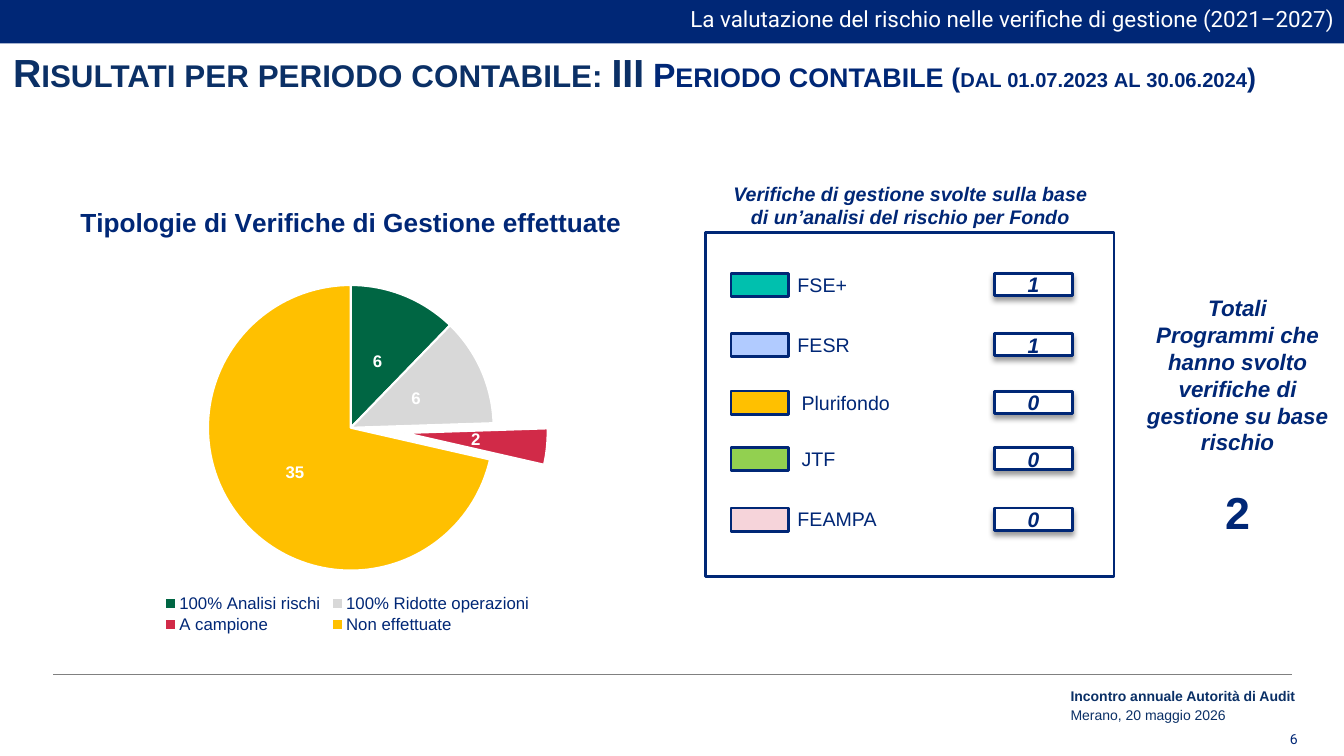
from lxml import etree
from pptx import Presentation
from pptx.chart.data import CategoryChartData
from pptx.dml.color import RGBColor
from pptx.enum.chart import XL_CHART_TYPE as ChartType, XL_LABEL_POSITION as LabelPosition
from pptx.enum.chart import XL_LEGEND_POSITION as LegendPosition
from pptx.enum.shapes import MSO_CONNECTOR as Connector, MSO_SHAPE as Shape
from pptx.enum.text import MSO_ANCHOR as Anchor, MSO_AUTO_SIZE as AutoSize, PP_ALIGN as Align
from pptx.oxml import parse_xml
from pptx.oxml.ns import nsdecls, qn
from pptx.util import Inches, Pt

NAVY, DARK, WHITE = "002776", "0B3066", "FFFFFF"
SHADOW = (
    f'<a:effectLst {nsdecls("a")}><a:outerShdw blurRad="50800" dist="38100" dir="5400000" '
    'algn="t" rotWithShape="0"><a:srgbClr val="000000"><a:alpha val="40000"/></a:srgbClr>'
    '</a:outerShdw></a:effectLst>'
)


def colour(value):
    """Turn a hex string into a colour."""
    return RGBColor.from_string(value)


def style(font, size=14, ink=NAVY, bold=False, italic=False, face="Arial"):
    """Format a font."""
    font.name, font.size, font.bold, font.italic = face, Pt(size), bold, italic
    font.color.rgb = colour(ink)


def write(box, text, new_para=False, align=Align.LEFT, anchor=Anchor.TOP, inset=None,
          wrap=True, before=0, small_caps=False, **format):
    """Add a formatted span to a shape, optionally in a new paragraph."""
    frame = box.text_frame
    frame.word_wrap, frame.vertical_anchor, frame.auto_size = wrap, anchor, AutoSize.NONE
    if inset is not None:
        frame.margin_left = frame.margin_right = Inches(inset)
        frame.margin_top = frame.margin_bottom = Inches(inset)
    para = frame.add_paragraph() if new_para else frame.paragraphs[-1]
    para.alignment = align
    if before:
        para.space_before = Pt(before)
    span = para.add_run()
    span.text = text
    style(span.font, **format)
    if small_caps:
        span._r.get_or_add_rPr().set("cap", "small")


def text_box(shapes, left, top, width, height, text, **format):
    """Add a text box."""
    box = shapes.add_textbox(Inches(left), Inches(top), Inches(width), Inches(height))
    write(box, text, **format)
    return box


def rectangle(shapes, left, top, width, height, fill=None, line=None, shadow=False):
    """Add a rectangle with optional fill, outline and shadow."""
    box = shapes.add_shape(Shape.RECTANGLE, Inches(left), Inches(top), Inches(width), Inches(height))
    box.shadow.inherit = False
    if fill:
        box.fill.solid()
        box.fill.fore_color.rgb = colour(fill)
    else:
        box.fill.background()
    if line:
        box.line.color.rgb = colour(line)
        box.line.width = Pt(2)
    else:
        box.line.fill.background()
    if shadow:
        properties = box._element.spPr
        properties.replace(properties.find(qn("a:effectLst")), parse_xml(SHADOW))
    return box


def header(page, left, top, width):
    """Draw the top band and the slide title."""
    band = rectangle(page.shapes, left, top, width, 0.43, fill=NAVY)
    write(band, "La valutazione del rischio nelle verifiche di gestione (2021–2027)",
          align=Align.RIGHT, size=16, ink=WHITE, face="Roboto")
    title = page.shapes.title
    title.left, title.top = Inches(left + 0.03), Inches(top + 0.43)
    title.width, title.height = Inches(width), Inches(0.98)
    for text, size, ink in (
        ("Risultati per periodo contabile: III ", 28, DARK),
        ("Periodo contabile (", 24, NAVY),
        ("dal 01.07.2023 al 30.06.2024", 18, NAVY),
        (")", 24, NAVY),
    ):
        write(title, text, size=size, ink=ink, bold=True, small_caps=True)


def place(element, x, y, width=None, height=None, inner=False):
    """Set the manual layout of a chart part, in fractions of the chart."""
    for old in element.findall(qn("c:layout")):
        element.remove(old)
    layout = parse_xml(f'<c:layout {nsdecls("c")}><c:manualLayout/></c:layout>')
    settings = [("layoutTarget", "inner")] if inner else []
    settings += [("xMode", "edge"), ("yMode", "edge"), ("x", x), ("y", y)]
    if width:
        settings += [("w", width), ("h", height)]
    for name, value in settings:
        etree.SubElement(layout[0], qn(f"c:{name}")).set("val", str(value))
    leading = element.findall(qn("c:tx")) + element.findall(qn("c:legendPos"))
    element.insert(len(leading), layout)


def checks_pie(page, left, top, width, height):
    """Draw the pie of checks by type."""
    data = CategoryChartData()
    data.categories = ["100% Analisi rischi", "100% Ridotte operazioni", "A campione", "Non effettuate"]
    data.add_series("Verifiche", (6, 6, 2, 35))
    chart = page.shapes.add_chart(ChartType.PIE, Inches(left), Inches(top),
                                  Inches(width), Inches(height), data).chart
    style(chart.font, size=10)
    chart.has_title = True
    span = chart.chart_title.text_frame.paragraphs[0].add_run()
    span.text = "Tipologie di Verifiche di Gestione effettuate"
    style(span.font, size=18.7, bold=True)
    chart.has_legend = True
    chart.legend.position = LegendPosition.BOTTOM
    chart.legend.include_in_layout = False
    style(chart.legend.font, size=12)

    pie = chart.plots[0]
    pie.vary_by_categories = True
    pie.has_data_labels = True
    pie.data_labels.show_value = True
    pie.data_labels.show_percentage = False
    pie.data_labels.position = LabelPosition.CENTER
    style(pie.data_labels.font, size=12, ink=WHITE, bold=True)
    series = pie.series[0]
    for index, fill in enumerate(("006643", "D8D8D8", "D12A48", "FFC000")):
        slice_format = series.points[index].format
        slice_format.fill.solid()
        slice_format.fill.fore_color.rgb = colour(fill)
        slice_format.line.color.rgb = colour(WHITE)
        slice_format.line.width = Pt(1.5)
    sample = series._element.findall(qn("c:dPt"))[2]
    explosion = parse_xml(f'<c:explosion {nsdecls("c")} val="38"/>')
    sample.find(qn("c:spPr")).addprevious(explosion)

    root = chart._chartSpace.chart
    place(root.find(qn("c:title")), 0.11, 0.05)
    place(root.find(qn("c:plotArea")), 0.3, 0.21, 0.41, 0.67, inner=True)
    place(root.find(qn("c:legend")), 0.23, 0.9, 0.54, 0.1)


def fund_row(page, left, top, name, fill, count, indent):
    """Draw one fund as a group of swatch, name and count."""
    shapes = page.shapes.add_group_shape().shapes
    rectangle(shapes, left, top, 0.57, 0.23, fill=fill, line=NAVY)
    text_box(shapes, left + indent, top - 0.06, 1.2, 0.34, name,
             anchor=Anchor.MIDDLE, inset=0.06)
    box = rectangle(shapes, left + 2.61, top, 0.78, 0.22, fill=WHITE, line=NAVY, shadow=True)
    write(box, count, align=Align.CENTER, anchor=Anchor.MIDDLE, inset=0.06,
          size=15, bold=True, italic=True)


def funds_panel(page, left, top, width, height):
    """Draw the framed list of funds and its heading."""
    rectangle(page.shapes, left, top, width, height, line=NAVY)
    text_box(page.shapes, left + 0.12, top - 0.47, 3.82, 0.39,
             "Verifiche di gestione svolte sulla base di un’analisi del rischio per Fondo",
             align=Align.CENTER, anchor=Anchor.MIDDLE, inset=0.06, bold=True, italic=True)
    for offset, name, fill, count, indent in (
        (0.4, "FSE+", "00C0AE", "1", 0.6),
        (1, "FESR", "B1CBFF", "1", 0.6),
        (1.57, "Plurifondo", "FFC000", "0", 0.64),
        (2.13, "JTF", "92D050", "0", 0.64),
        (2.73, "FEAMPA", "F6D4DA", "0", 0.6),
    ):
        fund_row(page, left + 0.25, top + offset, name, fill, count, indent)


def total(page, left, top, width):
    """Write the total of programmes beside the panel."""
    text_box(page.shapes, left, top, width, 1.7,
             "Totali Programmi che hanno svolto verifiche di gestione su base rischio",
             align=Align.CENTER, inset=0.06, size=16, bold=True, italic=True)
    text_box(page.shapes, left + 0.37, top + 1.78, 1.19, 0.88, "2", align=Align.CENTER,
             anchor=Anchor.MIDDLE, inset=0.06, size=32, bold=True)


def footer(page, left, top, width):
    """Draw the rule, the event and the page number."""
    rule = page.shapes.add_connector(Connector.STRAIGHT, Inches(left), Inches(top),
                                     Inches(left + width), Inches(top))
    rule.line.color.rgb = colour("808080")
    rule.line.width = Pt(0.75)
    etree.SubElement(rule._element.spPr, qn("a:effectLst"))
    event = text_box(page.shapes, left + 9.99, top + 0.08, 2.7, 0.43,
                     "Incontro annuale Autorità di Audit", wrap=False, size=10, ink=DARK, bold=True)
    write(event, "Merano, 20 maggio 2026", new_para=True, wrap=False, before=2, size=10, ink=DARK)
    text_box(page.shapes, left + 8.3, top + 0.54, 4.14, 0.2, "6", align=Align.RIGHT,
             anchor=Anchor.MIDDLE, size=10, face="Roboto")


def main():
    """Build and save the deck."""
    deck = Presentation()
    deck.slide_width, deck.slide_height = Inches(13.33), Inches(7.5)
    page = deck.slides.add_slide(deck.slide_layouts[5])
    header(page, 0, 0, 13.33)
    checks_pie(page, -0.01, 1.76, 6.91, 4.56)
    funds_panel(page, 7, 2.31, 4.05, 3.41)
    total(page, 11.31, 2.86, 1.93)
    footer(page, 0.53, 6.69, 12.28)
    deck.save("out.pptx")


if __name__ == "__main__":
    main()
